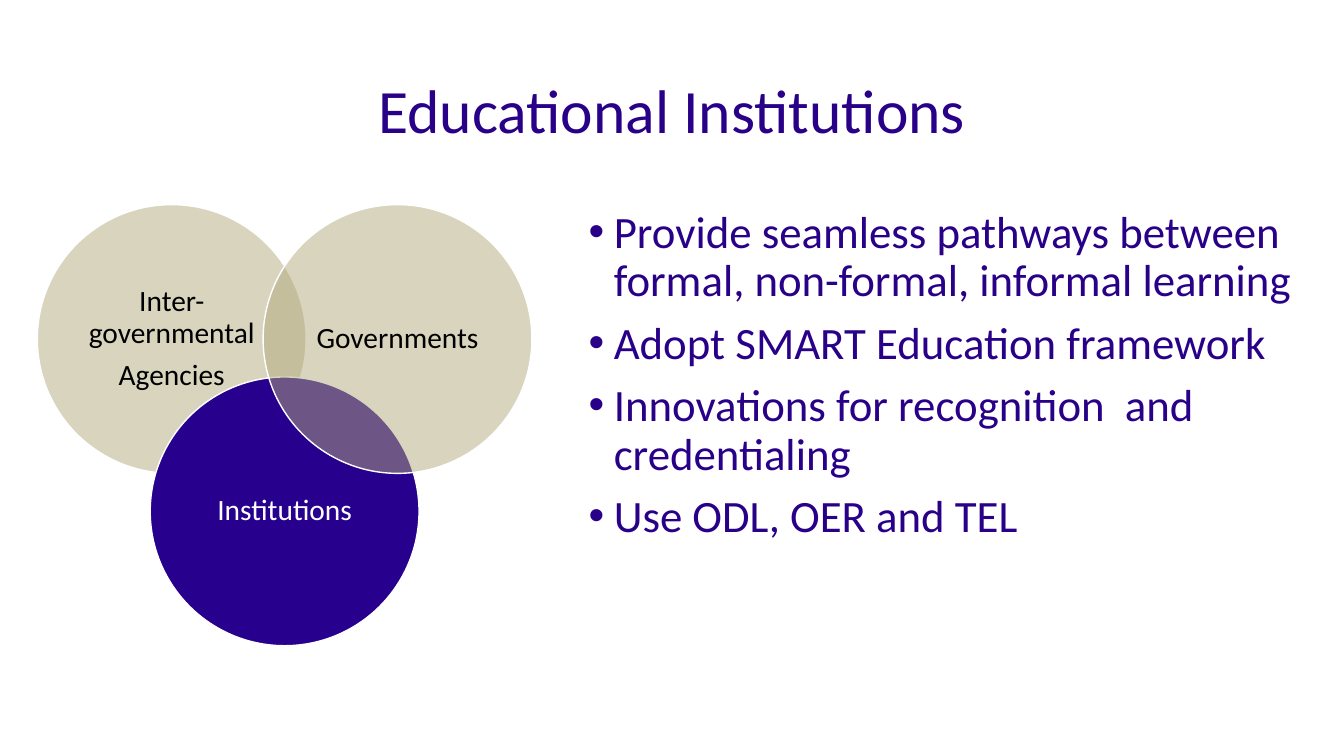
from dataclasses import dataclass
from math import sqrt

from lxml.etree import SubElement
from pptx import Presentation
from pptx.dml.color import RGBColor
from pptx.enum.shapes import MSO_SHAPE
from pptx.enum.text import MSO_ANCHOR, PP_ALIGN
from pptx.oxml.ns import qn
from pptx.slide import Slide
from pptx.text.text import TextFrame, _Paragraph
from pptx.util import Inches, Length, Pt

WIDTH, HEIGHT = Inches(13.33), Inches(7.5)
COLUMN, ROW = WIDTH / 100, HEIGHT / 100  # the slide is a grid of 100 by 100
FONT = "Calibri"
COLORS = {
    "text": "290088",
    "sand": "B3AA7E",
    "violet": "27018E",
    "white": "FFFFFF",
    "black": "000000",
}
CIRCLE_COLUMNS = 20
CIRCLE_LEFT, CIRCLE_STEP = 2.78, 8.4
UPPER_ROW, LOWER_ROW = 27.07, 49.87


@dataclass(frozen=True)
class Circle:
    step: int
    row: float
    fill: str
    opacity: int
    label_color: str
    label: tuple[str, ...]


CIRCLES = (
    Circle(0, UPPER_ROW, "sand", 50, "black", ("Inter-governmental", "Agencies")),
    Circle(1, LOWER_ROW, "violet", 100, "white", ("Institutions",)),
    Circle(2, UPPER_ROW, "sand", 50, "black", ("Governments",)),
)
POINTS = (
    "Provide seamless pathways between formal, non-formal, informal learning",
    "Adopt SMART Education framework",
    "Innovations for recognition  and credentialing",
    "Use ODL, OER and TEL",
)


def rgb(name: str) -> RGBColor:
    return RGBColor.from_string(COLORS[name])


def add_text_box(page: Slide, left: float, top: float, width: float, height: float,
                 anchor: MSO_ANCHOR = MSO_ANCHOR.MIDDLE) -> TextFrame:
    box = page.shapes.add_textbox(*(Length(round(side)) for side in (left, top, width, height)))
    frame = box.text_frame
    frame.word_wrap = True
    frame.vertical_anchor = anchor
    return frame


def add_paragraph(frame: TextFrame, index: int, text: str, size: float, color: str,
                  alignment: PP_ALIGN = PP_ALIGN.CENTER) -> _Paragraph:
    para = frame.add_paragraph() if index else frame.paragraphs[0]
    para.alignment = alignment
    para.line_spacing = 0.9
    span = para.add_run()
    span.text = text
    span.font.name = FONT
    span.font.size = Pt(size)
    span.font.color.rgb = rgb(color)
    return para


def add_bullet(para: _Paragraph) -> None:
    properties = para._p.get_or_add_pPr()
    properties.set("marL", str(Inches(0.25)))
    properties.set("indent", str(-Inches(0.25)))
    SubElement(properties, qn("a:buFont"), typeface="Arial")
    SubElement(properties, qn("a:buChar"), char="•")


def add_title(page: Slide) -> None:
    frame = add_text_box(page, 0, 5.33 * ROW, WIDTH, 19.33 * ROW)
    add_paragraph(frame, 0, "Educational Institutions", 44, "text")


def add_points(page: Slide) -> None:
    frame = add_text_box(page, 43.06 * COLUMN, UPPER_ROW * ROW, 55 * COLUMN, 63.73 * ROW,
                         MSO_ANCHOR.TOP)
    for index, point in enumerate(POINTS):
        para = add_paragraph(frame, index, point, 32, "text", PP_ALIGN.LEFT)
        if index:
            para.space_before = Pt(10)
        add_bullet(para)


def add_circle(page: Slide, circle: Circle) -> None:
    """Draw a circle and its label, which fills the square inscribed in it."""
    left = (CIRCLE_LEFT + circle.step * CIRCLE_STEP) * COLUMN
    top = circle.row * ROW
    diameter = CIRCLE_COLUMNS * COLUMN
    oval = page.shapes.add_shape(
        MSO_SHAPE.OVAL, *(Length(round(side)) for side in (left, top, diameter, diameter)))
    oval.shadow.inherit = False
    oval.fill.solid()
    oval.fill.fore_color.rgb = rgb(circle.fill)
    if circle.opacity < 100:
        fill_color = oval._element.spPr.find(qn("a:solidFill"))[0]
        SubElement(fill_color, qn("a:alpha"), val=str(circle.opacity * 1000))
    oval.line.color.rgb = rgb("white")
    oval.line.width = Pt(1)

    side = diameter / sqrt(2)
    inset = (diameter - side) / 2
    frame = add_text_box(page, left + inset, top + inset, side, side)
    frame.margin_left = frame.margin_right = Inches(0.09)
    frame.margin_top = frame.margin_bottom = Inches(0.09)
    for index, text in enumerate(circle.label):
        para = add_paragraph(frame, index, text, 21, circle.label_color)
        para.space_after = Pt(7.35)


def main() -> None:
    deck = Presentation()
    deck.slide_width, deck.slide_height = WIDTH, HEIGHT
    page = deck.slides.add_slide(deck.slide_layouts[6])
    add_title(page)
    add_points(page)
    for circle in CIRCLES:
        add_circle(page, circle)
    deck.save("out.pptx")


if __name__ == "__main__":
    main()
